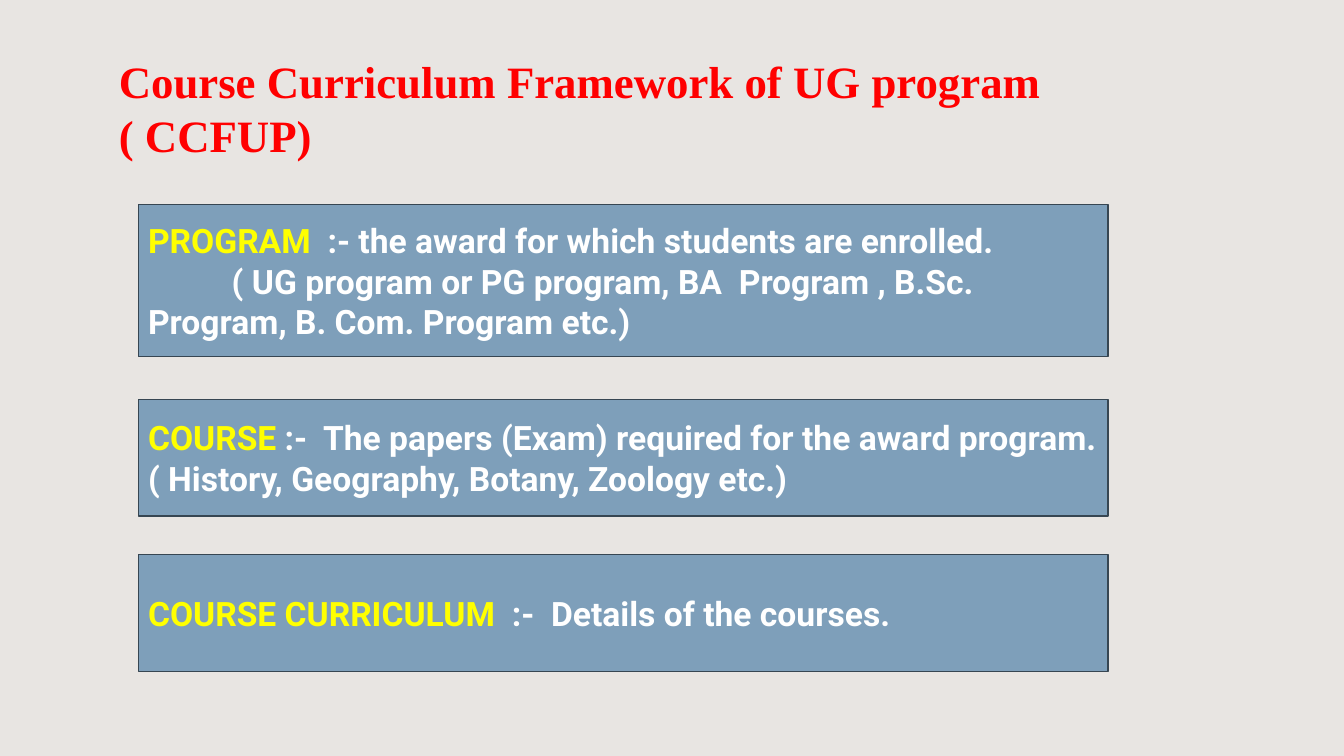
from pptx import Presentation
from pptx.dml.color import RGBColor
from pptx.enum.shapes import MSO_SHAPE
from pptx.enum.text import MSO_ANCHOR, PP_ALIGN
from pptx.util import Inches, Pt

BACKGROUND = RGBColor(0xE8, 0xE5, 0xE2)
RED = RGBColor(0xFF, 0x00, 0x00)
YELLOW = RGBColor(0xFF, 0xFF, 0x00)
WHITE = RGBColor(0xFF, 0xFF, 0xFF)
PANEL_BLUE = RGBColor(0x7E, 0x9F, 0xBA)
PANEL_EDGE = RGBColor(0x37, 0x46, 0x52)

# Top, height, term, definition, indented example
DEFINITIONS = [
    (2.03, 1.51, "PROGRAM", "  :- the award for which students are enrolled.",
     "( UG program or PG program, BA  Program , B.Sc. Program, B. Com. Program etc.)"),
    (3.96, 1.16, "COURSE",
     " :-  The papers (Exam) required for the award program. "
     "( History, Geography, Botany, Zoology etc.)", None),
    (5.5, 1.16, "COURSE CURRICULUM", "  :-  Details of the courses.", None),
]


def add_run(paragraph, text, color, size=24, name="Roboto"):
    run = paragraph.add_run()
    run.text = text
    for attribute, value in {"size": Pt(size), "name": name, "bold": True}.items():
        setattr(run.font, attribute, value)
    run.font.color.rgb = color


def add_heading(slide, text):
    heading = slide.shapes.add_textbox(Inches(1.08), Inches(0.43), Inches(11.17), Inches(1.22))
    frame = heading.text_frame
    frame.word_wrap = True
    frame.vertical_anchor = MSO_ANCHOR.BOTTOM
    add_run(frame.paragraphs[0], text, RED, 32, "Times New Roman")


def add_definition(slide, top, height, term, definition, example):
    panel = slide.shapes.add_shape(MSO_SHAPE.FLOWCHART_PROCESS, Inches(1.37), Inches(top),
                                   Inches(9.62), Inches(height))
    panel.shadow.inherit = False
    panel.fill.solid()
    panel.fill.fore_color.rgb = PANEL_BLUE
    panel.line.color.rgb = PANEL_EDGE
    panel.line.width = Pt(0.85)

    frame = panel.text_frame
    frame.word_wrap = True
    frame.vertical_anchor = MSO_ANCHOR.MIDDLE
    meaning = frame.paragraphs[0]
    meaning.alignment = PP_ALIGN.LEFT
    add_run(meaning, term, YELLOW)
    add_run(meaning, definition, WHITE)
    if example:
        detail = frame.add_paragraph()
        detail.alignment = PP_ALIGN.LEFT
        # First-line indent
        detail._p.get_or_add_pPr().set("indent", str(Inches(0.83)))
        add_run(detail, example, WHITE)


def main():
    presentation = Presentation()
    presentation.slide_width = Inches(13.33)
    presentation.slide_height = Inches(7.5)
    slide = presentation.slides.add_slide(presentation.slide_layouts[6])
    slide.background.fill.solid()
    slide.background.fill.fore_color.rgb = BACKGROUND

    # Heading
    add_heading(slide, "Course Curriculum Framework of UG program ( CCFUP)")

    # Definition panels
    for definition in DEFINITIONS:
        add_definition(slide, *definition)

    presentation.save("out.pptx")


if __name__ == "__main__":
    main()
